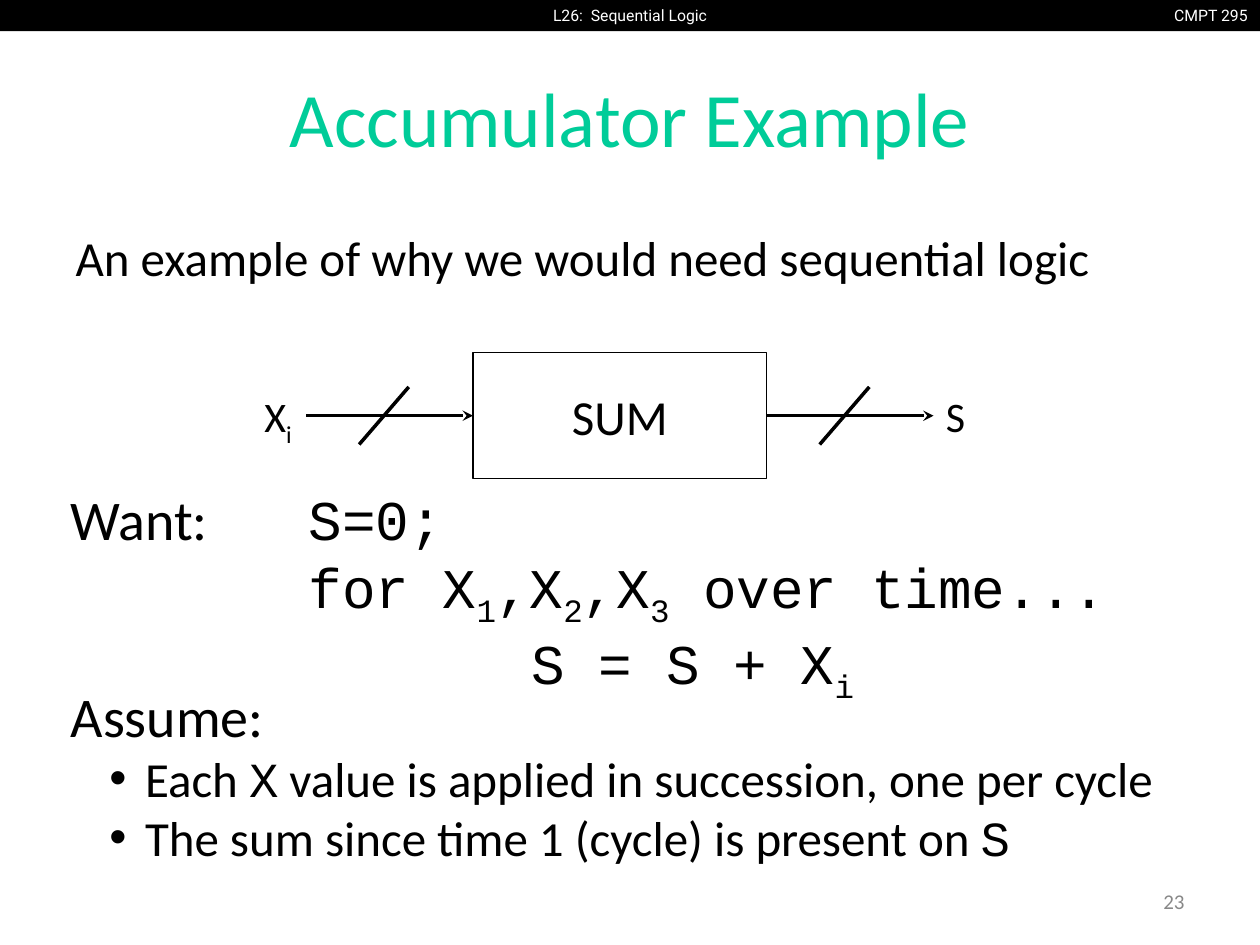
from dataclasses import dataclass

from lxml.etree import SubElement
from pptx import Presentation
from pptx.dml.color import RGBColor
from pptx.enum.shapes import MSO_CONNECTOR, MSO_SHAPE
from pptx.enum.text import MSO_ANCHOR, MSO_AUTO_SIZE, PP_ALIGN
from pptx.oxml.ns import qn
from pptx.util import Cm, Pt


@dataclass(frozen=True)
class Theme:
    black: RGBColor = RGBColor(0, 0, 0)
    white: RGBColor = RGBColor(255, 255, 255)
    title_color: RGBColor = RGBColor(0x00, 0xCC, 0x99)
    number_color: RGBColor = RGBColor(0x88, 0x88, 0x88)
    body_font: str = "Calibri"
    code_font: str = "Courier New"
    header_font: str = "Roboto"
    header_size: int = 9
    number_size: int = 12
    label_size: int = 24
    text_size: int = 28
    lead_size: int = 32
    title_size: int = 44


THEME = Theme()


def add_text(paragraph, text, *, size, font=THEME.body_font, color=THEME.black,
             align=PP_ALIGN.LEFT, subscript=False):
    """Append one formatted run to the paragraph."""
    paragraph.alignment = align
    run = paragraph.add_run()
    run.text = text
    run.font.size = Pt(size)
    run.font.name = font
    run.font.color.rgb = color
    if subscript:
        run.font._element.set("baseline", "-25000")


def add_subscripted(paragraph, pieces, **format):
    """Add pieces in which every second one is a subscript."""
    for index, piece in enumerate(pieces):
        add_text(paragraph, piece, subscript=index % 2 == 1, **format)


def place(shape, left, top, width, height):
    shape.left, shape.top = Cm(left), Cm(top)
    shape.width, shape.height = Cm(width), Cm(height)
    shape.text_frame.auto_size = MSO_AUTO_SIZE.NONE


def add_box(slide, left, top, width, height, wrap=True, anchor=MSO_ANCHOR.TOP):
    """Add a text box and return its text frame."""
    shape = slide.shapes.add_textbox(Cm(left), Cm(top), Cm(width), Cm(height))
    frame = shape.text_frame
    frame.word_wrap = wrap
    frame.vertical_anchor = anchor
    return frame


def add_rectangle(slide, left, top, width, height, fill):
    shape = slide.shapes.add_shape(
        MSO_SHAPE.RECTANGLE, Cm(left), Cm(top), Cm(width), Cm(height))
    shape.shadow.inherit = False
    shape.fill.solid()
    shape.fill.fore_color.rgb = fill
    return shape


def add_line(slide, start, end, arrow=False):
    line = slide.shapes.add_connector(
        MSO_CONNECTOR.STRAIGHT, *(Cm(value) for value in (*start, *end)))
    line.line.color.rgb = THEME.black
    line.line.width = Pt(2)
    if arrow:
        SubElement(line.line._get_or_add_ln(), qn("a:tailEnd"), type="stealth")
    SubElement(line._element.spPr, qn("a:effectLst"))
    return line


def format_list_item(paragraph, bullet=None, indent=0, hanging=0):
    """Set spacing, indents and the bullet (none by default)."""
    paragraph.space_before = paragraph.space_after = Pt(0)
    properties = paragraph._p.get_or_add_pPr()
    properties.set("marL", str(Cm(indent)))
    properties.set("indent", str(-Cm(hanging)))
    if bullet:
        SubElement(properties, qn("a:buChar"), char=bullet)
    else:
        SubElement(properties, qn("a:buNone"))


def add_header(slide, left, top, width, height):
    bar = add_rectangle(slide, left, top, width, height, THEME.black)
    bar.line.fill.background()
    entries = (
        ("CMPT 295", left + width - 2.06, 2.06, PP_ALIGN.RIGHT),
        ("L26:  Sequential Logic", left + (width - 4.72) / 2, 4.72, PP_ALIGN.CENTER),
    )
    for text, text_left, text_width, align in entries:
        frame = add_box(slide, text_left, top, text_width, height, wrap=False)
        add_text(frame.paragraphs[0], text, size=THEME.header_size,
                 font=THEME.header_font, color=THEME.white, align=align)


def fill_title(shape, *box):
    place(shape, *box)
    shape.text_frame.vertical_anchor = MSO_ANCHOR.MIDDLE
    add_text(shape.text_frame.paragraphs[0], "Accumulator Example",
             size=THEME.title_size, color=THEME.title_color, align=PP_ALIGN.CENTER)


def fill_introduction(shape, *box):
    place(shape, *box)
    paragraph = shape.text_frame.paragraphs[0]
    format_list_item(paragraph)
    add_text(paragraph, "An example of why we would need sequential logic",
             size=THEME.text_size)


def add_diagram(slide, left, top, width, height):
    """Draw the SUM block with its input and output buses."""
    input_width, output_width, block_width = 1.09, 0.91, 5.92
    middle = top + height / 2
    bus_length = (width - input_width - output_width - block_width) / 2
    input_start = left + input_width
    block_left = input_start + bus_length
    output_start = block_left + block_width
    output_end = output_start + bus_length

    block = add_rectangle(slide, block_left, top, block_width, height, THEME.white)
    block.line.color.rgb = THEME.black
    block.line.width = Pt(0.75)
    block.text_frame.vertical_anchor = MSO_ANCHOR.MIDDLE
    add_text(block.text_frame.paragraphs[0], "SUM", size=THEME.text_size,
             align=PP_ALIGN.CENTER)

    buses = []
    for start in (input_start, output_start):
        buses.append(add_line(slide, (start, middle), (start + bus_length, middle),
                              arrow=True))
        slash = start + 1.57
        add_line(slide, (slash - 0.5, middle + 0.58), (slash + 0.5, middle - 0.58))
    buses[0].end_connect(block, 1)
    buses[1].begin_connect(block, 3)

    labels = ((left, input_width, ("X", "i")), (output_end, output_width, ("S",)))
    for label_left, label_width, pieces in labels:
        frame = add_box(slide, label_left, middle - 0.63, label_width, 1.27)
        add_subscripted(frame.paragraphs[0], pieces, size=THEME.label_size)


def add_code(slide, *box):
    frame = add_box(slide, *box)
    lines = (
        ("\tS=0;",),
        ("\tfor X", "1", ",X", "2", ",X", "3", " over time..."),
        ("\t\tS = S + X", "i"),
    )
    for index, pieces in enumerate(lines):
        paragraph = frame.add_paragraph() if index else frame.paragraphs[0]
        stops = SubElement(paragraph._p.get_or_add_pPr(), qn("a:tabLst"))
        for position in (4.8, 9.3):
            SubElement(stops, qn("a:tab"), pos=str(Cm(position)), algn="l")
        if index == 0:
            add_text(paragraph, "Want:", size=THEME.lead_size)
        add_subscripted(paragraph, pieces, size=THEME.lead_size, font=THEME.code_font)


def fill_assumptions(shape, *box):
    place(shape, *box)
    frame = shape.text_frame
    format_list_item(frame.paragraphs[0])
    add_text(frame.paragraphs[0], "Assume:", size=THEME.lead_size)
    items = (
        ("Each ", "X", " value is applied in succession, one per cycle"),
        ("The sum since time 1 (cycle) is present on ", "S"),
    )
    for pieces in items:
        paragraph = frame.add_paragraph()
        paragraph.level = 1
        format_list_item(paragraph, bullet="•", indent=1.5, hanging=0.72)
        for index, piece in enumerate(pieces):
            font = THEME.code_font if index == 1 else THEME.body_font
            add_text(paragraph, piece, size=THEME.text_size, font=font)


def add_slide_number(slide, *box):
    frame = add_box(slide, *box, anchor=MSO_ANCHOR.MIDDLE)
    add_text(frame.paragraphs[0], "23", size=THEME.number_size,
             color=THEME.number_color, align=PP_ALIGN.RIGHT)


def main():
    presentation = Presentation()
    presentation.slide_width, presentation.slide_height = Cm(25.4), Cm(19.05)
    slide = presentation.slides.add_slide(presentation.slide_layouts[3])
    title, introduction, assumptions = slide.placeholders
    add_header(slide, 0, 0, 25.4, 0.63)
    fill_title(title, 1.27, 0.76, 22.86, 3.18)
    fill_introduction(introduction, 1.27, 4.45, 22.86, 3.81)
    add_diagram(slide, 5.08, 7.11, 14.65, 2.54)
    add_code(slide, 1.17, 9.65, 22.43, 4.37)
    fill_assumptions(assumptions, 1.17, 13.61, 23.24, 4.04)
    add_slide_number(slide, 18.2, 17.65, 5.93, 1.02)
    presentation.save("out.pptx")


if __name__ == "__main__":
    main()
